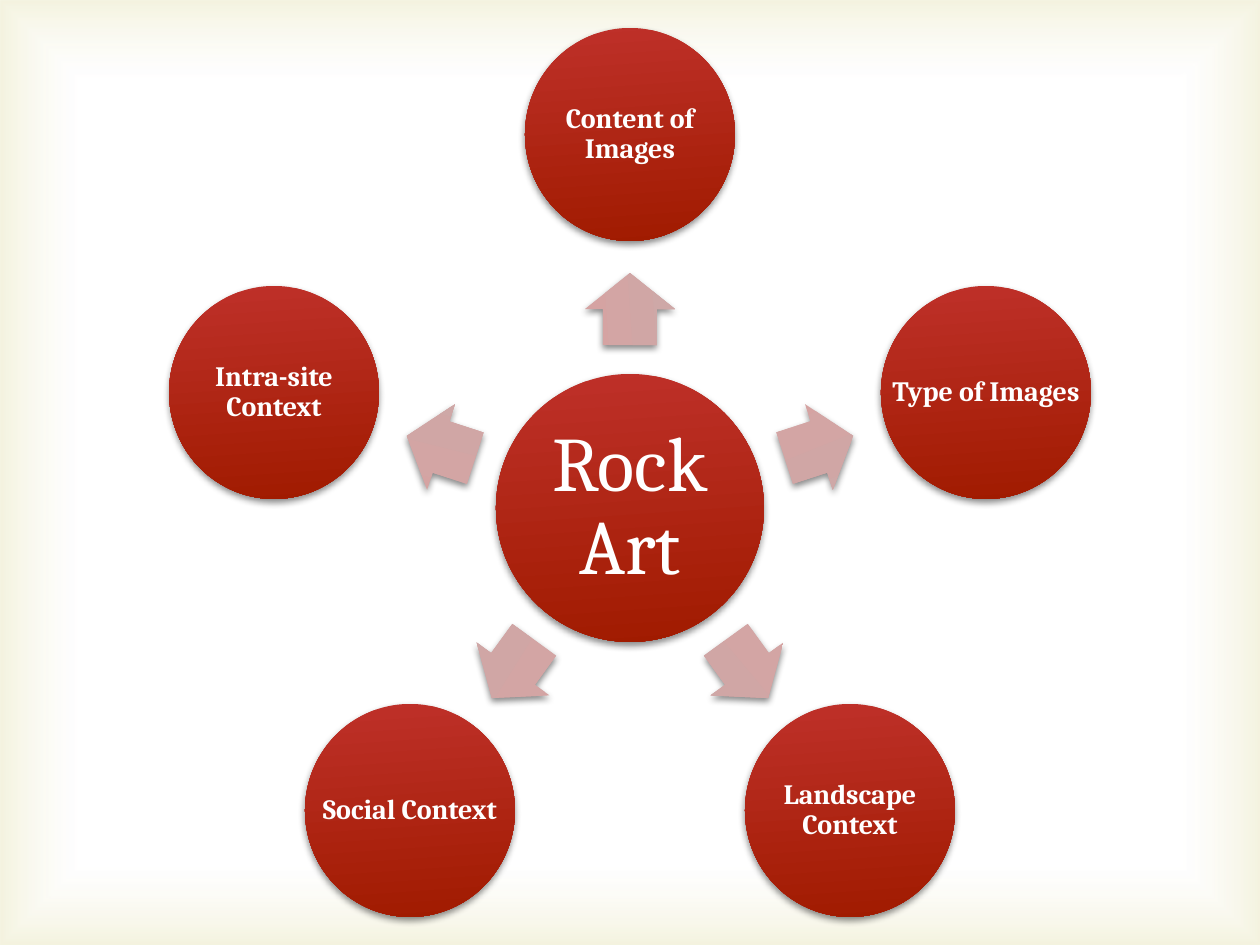
from dataclasses import dataclass
from math import cos, radians, sin

from lxml.etree import SubElement
from pptx import Presentation
from pptx.dml.color import RGBColor as RGB
from pptx.enum.shapes import MSO_SHAPE as Geom
from pptx.enum.text import MSO_ANCHOR as Anchor, PP_ALIGN as Align
from pptx.oxml import parse_xml
from pptx.oxml.ns import nsdecls, qn
from pptx.util import Pt

PX = 914400 // 126
WIDE, HIGH = 1260, 945


@dataclass(frozen=True)
class Theme:
    font: str = "Cambria"
    ink: str = "FFFFFF"
    back: str = "FFFFFF"
    # Gradient stops: place %, colour, opacity %
    glow: tuple = ((83, "FFFFFF", 11), (100, "D1CA75", 23))
    disc: tuple = ((0, "BE3029", 100), (100, "A01B00", 100))
    arrow: tuple = ((0, "D5A3A2", 100), (100, "CEA8A7", 100))
    hub_size: int = 44
    node_size: int = 16


class Deck:
    def __init__(self, theme):
        self.theme = theme
        self.show = Presentation()
        self.show.slide_width = WIDE * PX
        self.show.slide_height = HIGH * PX
        self.slide = self.show.slides.add_slide(self.show.slide_layouts[6])
        fill = self.slide.background.fill
        fill.solid()
        fill.fore_color.rgb = RGB.from_string(theme.back)

    def box(self, x, y, w, h):
        """EMU frame of a box centred on x, y."""
        return [round(v) * PX for v in (x - w / 2, y - h / 2, w, h)]

    def blend(self, shape, stops, shade):
        """Fill with a gradient; shade is its direction as XML."""
        gs = "".join(
            f'<a:gs pos="{at * 1000}"><a:srgbClr val="{hue}">'
            f'<a:alpha val="{alpha * 1000}"/></a:srgbClr></a:gs>'
            for at, hue, alpha in stops)
        grad = parse_xml(f'<a:gradFill {nsdecls("a")} rotWithShape="1">'
                         f'<a:gsLst>{gs}</a:gsLst>{shade}</a:gradFill>')
        shape.fill.background()
        props = shape._element.spPr
        props.replace(props.find(qn("a:noFill")), grad)

    def shape(self, kind, frame, stops, shade='<a:lin ang="5160000" scaled="0"/>'):
        item = self.slide.shapes.add_shape(kind, *frame)
        self.blend(item, stops, shade)
        item.line.fill.background()
        item.shadow.inherit = False
        return item

    def shadow(self, item):
        effects = item._element.spPr.find(qn("a:effectLst"))
        cast = SubElement(effects, qn("a:outerShdw"), blurRad=str(Pt(4)),
                          dist=str(Pt(2)), dir="5400000", rotWithShape="0")
        hue = SubElement(cast, qn("a:srgbClr"), val="000000")
        SubElement(hue, qn("a:alpha"), val="46000")

    def glow(self):
        rim = "".join(f' {side}="50000"' for side in "ltrb")
        self.shape(Geom.RECTANGLE, (0, 0, WIDE * PX, HIGH * PX), self.theme.glow,
                   f'<a:path path="rect"><a:fillToRect{rim}/></a:path>')

    def arrow(self, x, y, turn):
        item = self.shape(Geom.RIGHT_ARROW, self.box(x, y, 72, 90), self.theme.arrow)
        item.adjustments[0], item.adjustments[1] = 0.6, 0.5
        item.rotation = turn % 360
        self.shadow(item)

    def disc(self, x, y, w, h, text, size, pad, bold=False):
        frame = self.box(x, y, w, h)
        self.shadow(self.shape(Geom.OVAL, frame, self.theme.disc))
        # The label uses the full width of the disc
        body = self.slide.shapes.add_textbox(*frame).text_frame
        body.word_wrap = True
        body.vertical_anchor = Anchor.MIDDLE
        body.margin_left = body.margin_right = pad * PX
        body.margin_top = body.margin_bottom = pad * PX
        body.text = text
        para = body.paragraphs[0]
        para.alignment = Align.CENTER
        para.line_spacing = 0.9
        font = para.runs[0].font
        font.name, font.size, font.bold = self.theme.font, Pt(size), bold
        font.color.rgb = RGB.from_string(self.theme.ink)


def main():
    theme = Theme()
    deck = Deck(theme)
    deck.glow()

    # Hub
    mid_x, mid_y = 630, 508
    deck.disc(mid_x, mid_y, 268, 268, "Rock Art", theme.hub_size, 8)

    # Spokes, clockwise from the top
    labels = ["Content of Images", "Type of Images", "Landscape Context",
              "Social Context", "Intra-site Context"]
    for i, label in enumerate(labels):
        turn = i * 360 / len(labels) - 90
        dx, dy = cos(radians(turn)), sin(radians(turn))
        deck.arrow(mid_x + 199 * dx, mid_y + 199 * dy, turn)
        deck.disc(mid_x + 374 * dx, mid_y + 374 * dy, 210, 213,
                  label, theme.node_size, 2, bold=True)

    deck.show.save("out.pptx")


if __name__ == "__main__":
    main()
